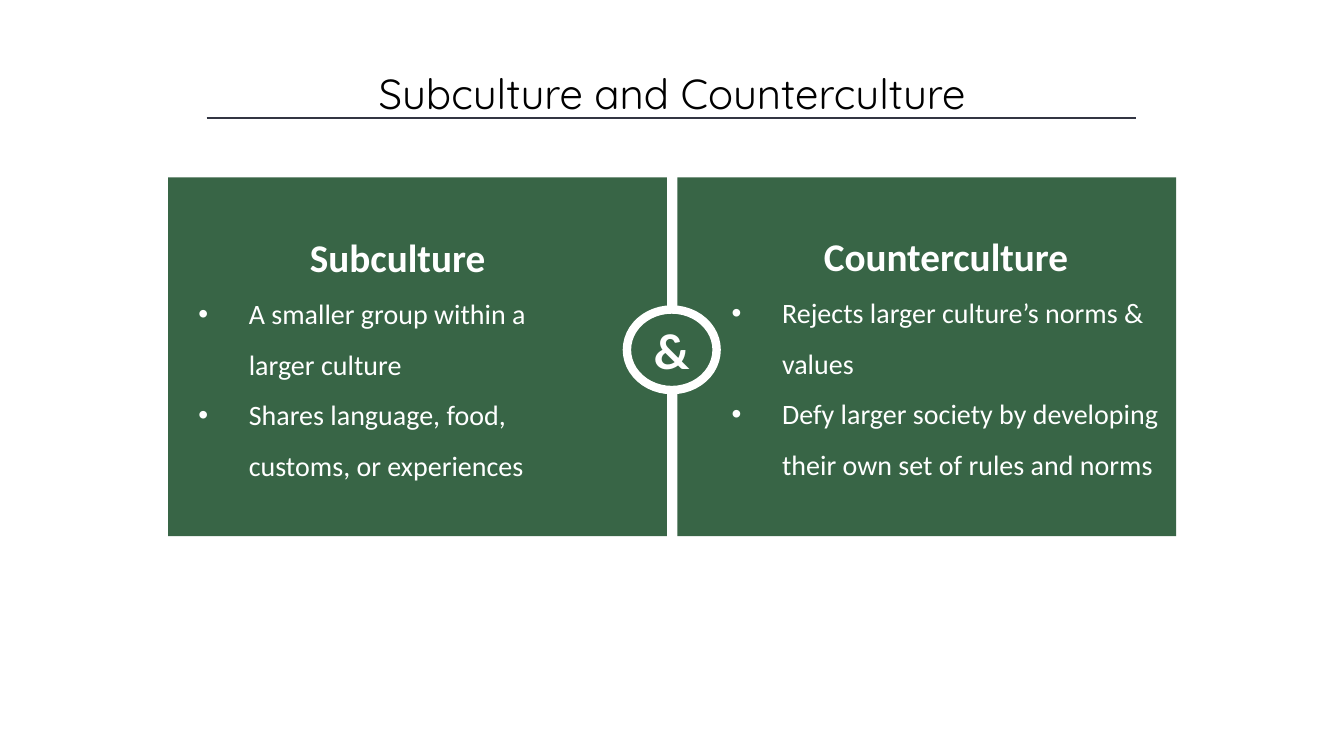
from lxml import etree
from pptx import Presentation
from pptx.dml.color import RGBColor
from pptx.enum.shapes import MSO_CONNECTOR, MSO_SHAPE
from pptx.enum.text import MSO_ANCHOR, MSO_AUTO_SIZE, PP_ALIGN
from pptx.oxml.ns import qn
from pptx.util import Cm, Pt

GREEN = RGBColor(0x38, 0x65, 0x46)
WHITE = RGBColor(0xFF, 0xFF, 0xFF)
BLACK = RGBColor(0, 0, 0)
SLATE = RGBColor(0x32, 0x35, 0x42)


def write(p, text, size, color=WHITE, font="Calibri", bold=False,
          align=PP_ALIGN.CENTER, spacing=None, bullet=False):
    if bullet:
        pPr = p._p.get_or_add_pPr()
        pPr.set("marL", str(Cm(1.27)))
        pPr.set("indent", str(-Cm(1.27)))
        etree.SubElement(pPr, qn("a:buFont"), typeface="Arial")
        etree.SubElement(pPr, qn("a:buChar"), char="•")
    p.alignment = align
    if spacing:
        p.line_spacing = spacing
    r = p.add_run()
    r.text = text
    r.font.name = font
    r.font.size = Pt(size)
    r.font.bold = bold
    r.font.color.rgb = color


class Deck:
    def __init__(self):
        self.prs = Presentation()
        self.prs.slide_width = Cm(33.87)
        self.prs.slide_height = Cm(19.05)
        self.slide = self.prs.slides.add_slide(self.prs.slide_layouts[5])

    def title(self, text, x, y, w, h):
        sp = self.slide.shapes.title
        sp.left, sp.top, sp.width, sp.height = Cm(x), Cm(y), Cm(w), Cm(h)
        tf = sp.text_frame
        tf.word_wrap = True
        tf.auto_size = MSO_AUTO_SIZE.NONE
        tf.vertical_anchor = MSO_ANCHOR.TOP
        write(tf.paragraphs[0], text, 30, BLACK, "Quicksand")

    def rule(self, x1, x2, y):
        line = self.slide.shapes.add_connector(
            MSO_CONNECTOR.STRAIGHT, Cm(x1), Cm(y), Cm(x2), Cm(y))
        line.line.color.rgb = SLATE
        line.line.width = Pt(1)
        etree.SubElement(line._element.spPr, qn("a:effectLst"))

    def shape(self, x, y, w, h, kind=MSO_SHAPE.RECTANGLE):
        sp = self.slide.shapes.add_shape(kind, Cm(x), Cm(y), Cm(w), Cm(h))
        sp.shadow.inherit = False
        sp.fill.solid()
        sp.fill.fore_color.rgb = GREEN
        sp.line.fill.background()
        tf = sp.text_frame
        tf.word_wrap = True
        tf.vertical_anchor = MSO_ANCHOR.MIDDLE
        return sp

    def badge(self, text, x, y, w, h):
        sp = self.shape(x, y, w, h, MSO_SHAPE.OVAL)
        sp.line.color.rgb = WHITE
        sp.line.width = Pt(6)
        write(sp.text_frame.paragraphs[0], text, 36, bold=True)

    def card(self, heading, points, x, y, w, h):
        tf = self.shape(x, y, w, h).text_frame
        write(tf.paragraphs[0], heading, 28, bold=True, spacing=1.5)
        for point in points:
            write(tf.add_paragraph(), point, 20, align=PP_ALIGN.LEFT,
                  spacing=1.5, bullet=True)


def main():
    deck = Deck()
    deck.title("Subculture and Counterculture", 4.24, 1.57, 25.4, 1.55)
    deck.rule(5.21, 28.63, 2.97)
    for x in (4.24, 17.07):
        deck.shape(x, 4.47, 12.57, 9.04)
    deck.badge("&", 15.8, 7.8, 2.26, 2.03)
    deck.card("Subculture",
              ["A smaller group within a larger culture",
               "Shares language, food, customs, or experiences"],
              4.75, 5.18, 10.54, 7.06)
    deck.card("Counterculture",
              ["Rejects larger culture’s norms & values",
               "Defy larger society by developing their own set of rules and norms"],
              18.19, 4.52, 11.3, 8.33)
    deck.prs.save("out.pptx")


if __name__ == "__main__":
    main()
